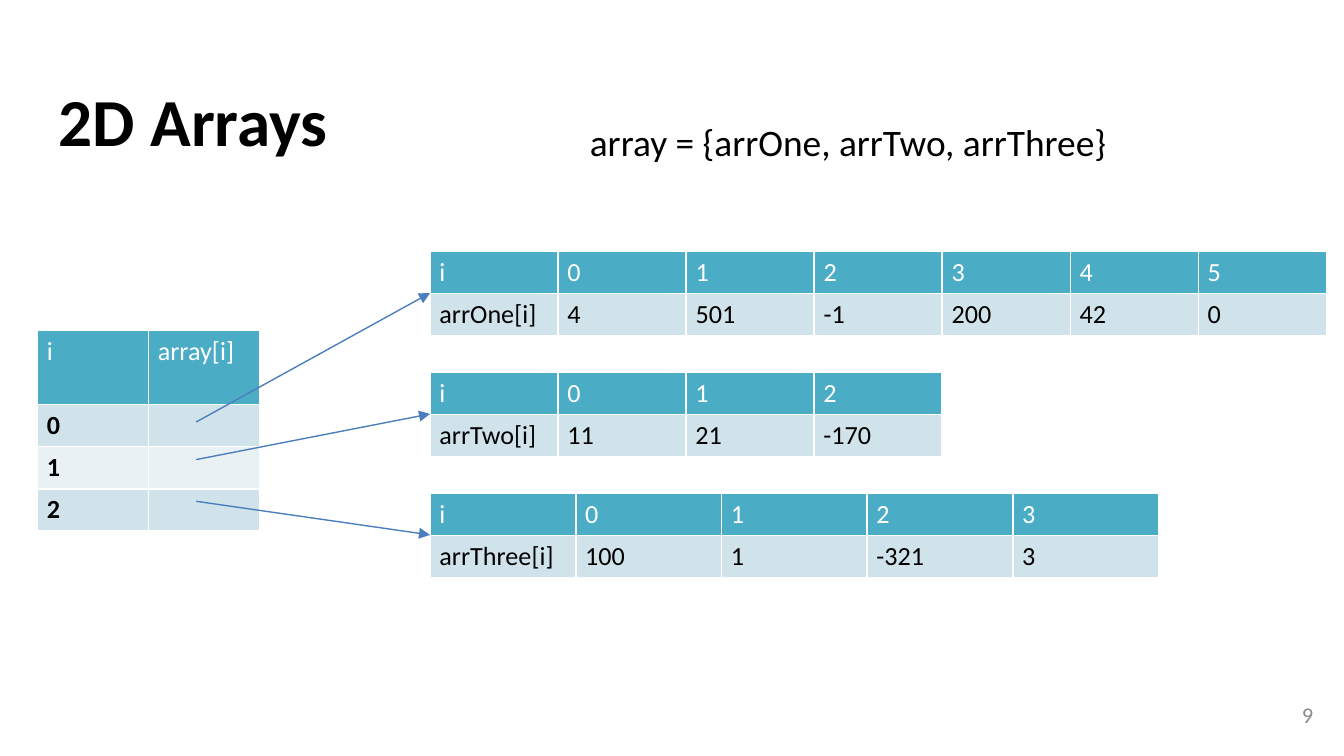
"""Build the 2D Arrays slide: an index table pointing at three arrays."""
from dataclasses import dataclass

from lxml import etree
from pptx import Presentation
from pptx import util as u
from pptx.dml.color import RGBColor
from pptx.enum import shapes, text
from pptx.oxml import ns


@dataclass(frozen=True)
class Theme:
    font: str = "Calibri"
    ink: str = "000000"
    header_ink: str = "FFFFFF"
    muted: str = "8C8C8C"
    header: str = "4BACC6"
    bands: tuple = ("D0E3EA", "E9F1F5")
    arrow: str = "4B7EBC"
    title_size: int = 36
    formula_size: int = 20
    cell_size: int = 14
    number_size: int = 12


theme = Theme()


def style_text(frame, size, color, bold=False):
    paragraph = frame.paragraphs[0]
    for run in paragraph.runs:
        run.font.name = theme.font
        run.font.size = u.Pt(size)
        run.font.bold = bold
        run.font.color.rgb = RGBColor.from_string(color)
    if not paragraph.runs:
        etree.SubElement(paragraph._p, ns.qn("a:endParaRPr"), sz=str(size * 100))


def add_grid(rows, left, top, width, bold_index=False):
    grid = slide.shapes.add_table(
        len(rows), len(rows[0]), u.Inches(left), u.Inches(top),
        u.Inches(width), u.Inches(ROW_HEIGHT * len(rows))).table
    for r, values in enumerate(rows):
        for c, value in enumerate(values):
            cell = grid.cell(r, c)
            cell.margin_left = cell.margin_right = u.Inches(0.07)
            cell.margin_top = cell.margin_bottom = u.Inches(0.04)
            cell.fill.solid()
            fill = theme.bands[(r - 1) % 2] if r else theme.header
            cell.fill.fore_color.rgb = RGBColor.from_string(fill)
            cell.text_frame.text = value
            style_text(cell.text_frame, theme.cell_size,
                       theme.ink if r else theme.header_ink, bold_index and r > 0)
    return grid


ROW_HEIGHT = 0.31
ARRAYS_LEFT = 3.2

deck = Presentation()
deck.slide_width = u.Inches(10)
deck.slide_height = u.Inches(10) * 9 // 16
slide = deck.slides.add_slide(deck.slide_layouts[6])

labels = [
    ("2D Arrays", (0.34, 0.49, 9.32, 0.63), theme.title_size, theme.ink, True,
     text.PP_ALIGN.LEFT, text.MSO_ANCHOR.TOP, True),
    ("9", (9.27, 5.1, 0.6, 0.43), theme.number_size, theme.muted, False,
     text.PP_ALIGN.RIGHT, text.MSO_ANCHOR.MIDDLE, True),
    ("array = {arrOne, arrTwo, arrThree}", (4.29, 0.84, 4.15, 0.44),
     theme.formula_size, theme.ink, False,
     text.PP_ALIGN.LEFT, text.MSO_ANCHOR.TOP, False),
]
for wording, place, size, color, bold, align, anchor, wrap in labels:
    label = slide.shapes.add_textbox(*map(u.Inches, place)).text_frame
    label.word_wrap = wrap
    label.vertical_anchor = anchor
    if wrap:
        label.margin_top = label.margin_bottom = u.Inches(0.1)
    label.text = wording
    label.paragraphs[0].alignment = align
    style_text(label, size, color, bold)

index_rows = [("i", "array[i]"), ("0", ""), ("1", ""), ("2", "")]
index_grid = add_grid(index_rows, 0.28, 2.46, 1.65, bold_index=True)
index_grid.rows[0].height = u.Inches(0.55)

arrays = [
    ("arrOne[i]", ("4", "501", "-1", "200", "42", "0"), 1.87, 6.67, 3.14),
    ("arrTwo[i]", ("11", "21", "-170"), 2.77, 3.81, 3.42),
    ("arrThree[i]", ("100", "1", "-321", "3"), 3.67, 5.42, 3.73),
]
for name, values, top, width, arrow_start in arrays:
    positions = [str(i) for i in range(len(values))]
    add_grid([("i", *positions), (name, *values)], ARRAYS_LEFT, top, width)

    arrow = slide.shapes.add_connector(
        shapes.MSO_CONNECTOR.STRAIGHT, u.Inches(1.46), u.Inches(arrow_start),
        u.Inches(ARRAYS_LEFT), u.Inches(top + ROW_HEIGHT))
    arrow.line.color.rgb = RGBColor.from_string(theme.arrow)
    arrow.line.width = u.Pt(0.75)
    etree.SubElement(arrow.line._get_or_add_ln(), ns.qn("a:tailEnd"), type="triangle")
    etree.SubElement(arrow._element.spPr, ns.qn("a:effectLst"))

deck.save("out.pptx")
